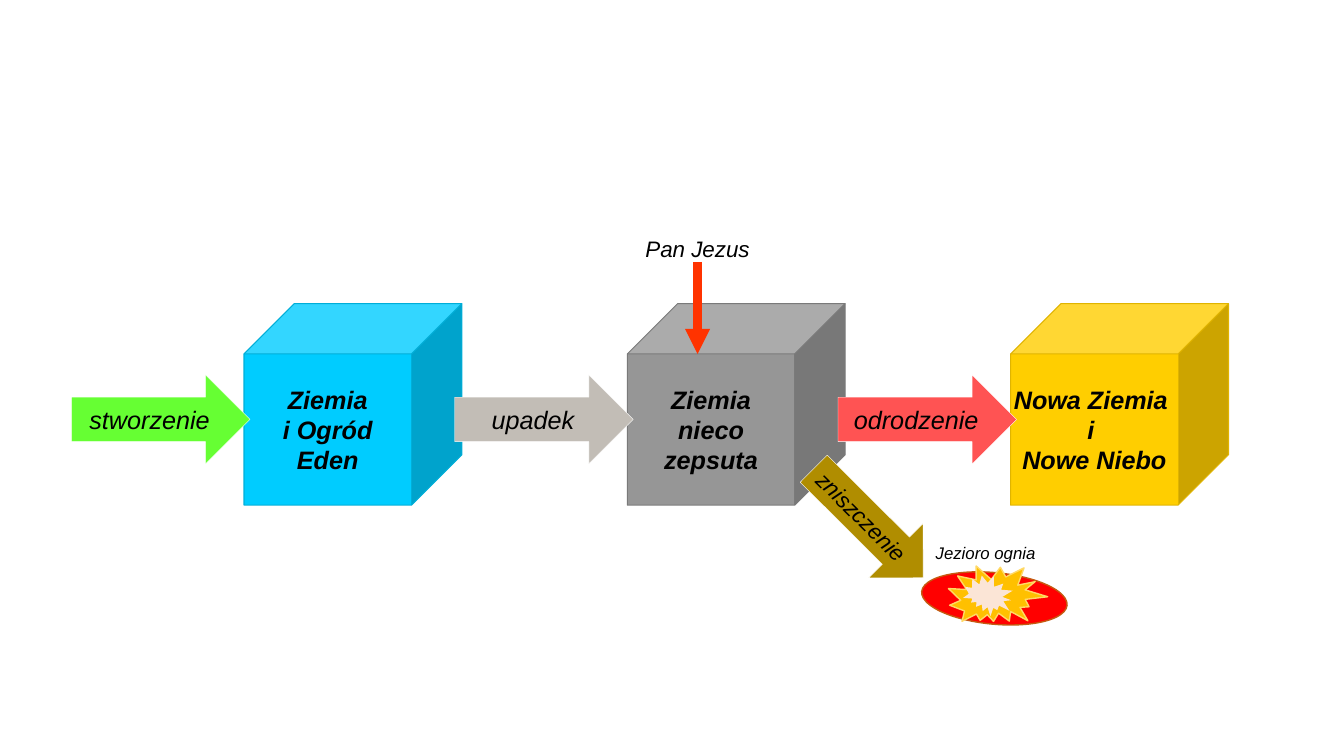
from dataclasses import dataclass

from lxml import etree
from pptx import Presentation
from pptx.dml.color import RGBColor
from pptx.enum.shapes import MSO_CONNECTOR, MSO_SHAPE
from pptx.enum.text import MSO_ANCHOR, MSO_AUTO_SIZE, PP_ALIGN
from pptx.oxml.ns import qn
from pptx.util import Cm, Pt


@dataclass(frozen=True)
class Theme:
    font: str = "Arial"
    text: str = "000000"
    stage_size: int = 18
    label_size: int = 16
    small_size: int = 12
    arrow_edge: str = "FFFFFF"
    destruction: str = "B08D00"
    descent: str = "FF3300"
    lake: str = "FF0000"
    lake_edge: str = "C55A11"
    flame: str = "FFC000"
    flame_edge: str = "FFD966"
    glow: str = "FBE5D6"


THEME = Theme()

# Arrow text, arrow fill, cube text, cube fill, cube edge.
# "\n" starts a paragraph, "\v" breaks a line.
STAGES = [
    ("stworzenie", "66FF33", "Ziemia\ni Ogród\vEden", "00CCFF", "00AED8"),
    ("upadek", "C2BDB6", "Ziemia\vnieco\vzepsuta", "969696", "7A7A7A"),
    ("odrodzenie", "FF5353", "Nowa Ziemia \ni \nNowe Niebo", "FFCE00", "E0B400"),
]
STAGE_LEFT, STAGE_TOP, STAGE_PITCH = 1.8, 7.65, 9.66
STAGE_WIDTH, STAGE_HEIGHT = 9.84, 5.08


def write_text(shape, text, size=THEME.stage_size, bold=False, wrap=False):
    frame = shape.text_frame
    frame.text = text
    frame.word_wrap = wrap
    frame.vertical_anchor = MSO_ANCHOR.MIDDLE
    for paragraph in frame.paragraphs:
        paragraph.alignment = PP_ALIGN.CENTER
        for run in paragraph.runs:
            run.font.name = THEME.font
            run.font.size = Pt(size)
            run.font.bold = bold
            run.font.italic = True
            run.font.color.rgb = RGBColor.from_string(THEME.text)


def add_figure(shapes, kind, box, fill, edge=None, edge_width=1, rotation=0):
    shape = shapes.add_shape(kind, *map(Cm, box))
    shape.shadow.inherit = False
    shape.rotation = rotation
    shape.fill.solid()
    shape.fill.fore_color.rgb = RGBColor.from_string(fill)
    if edge:
        shape.line.color.rgb = RGBColor.from_string(edge)
        shape.line.width = Pt(edge_width)
    else:
        shape.line.fill.background()
    return shape


def add_label(shapes, box, text, size):
    label = shapes.add_textbox(*map(Cm, box))
    frame = label.text_frame
    frame.margin_left = frame.margin_right = Cm(0.08)
    frame.margin_top = frame.margin_bottom = Cm(0.08)
    frame.auto_size = MSO_AUTO_SIZE.SHAPE_TO_FIT_TEXT
    write_text(label, text, size=size, wrap=True)


def add_block_arrow(shapes, box, text, fill, size=THEME.stage_size, rotation=0):
    arrow = add_figure(shapes, MSO_SHAPE.RIGHT_ARROW, box, fill,
                       THEME.arrow_edge, 0.25, rotation)
    write_text(arrow, text, size=size)


def add_stage(shapes, box, stage):
    """A cube at the right of the box, with an arrow leading into it."""
    left, top, width, height = box
    arrow_text, arrow_fill, cube_text, cube_fill, cube_edge = stage
    cube_width, arrow_width, arrow_height = 5.49, 4.5, 2.24
    cube_box = (left + width - cube_width, top, cube_width, height)
    cube = add_figure(shapes, MSO_SHAPE.CUBE, cube_box, cube_fill, cube_edge, 0.75)
    write_text(cube, cube_text, bold=True)
    add_block_arrow(shapes, (left, top + 1.8, arrow_width, arrow_height),
                    arrow_text, arrow_fill)


def add_descent(shapes, box):
    """A label with an arrow pointing down to the bottom of the box."""
    left, top, width, height = box
    center = left + width / 2
    line = shapes.add_connector(MSO_CONNECTOR.STRAIGHT, Cm(center), Cm(top + 0.76),
                                Cm(center), Cm(top + height))
    line.line.color.rgb = RGBColor.from_string(THEME.descent)
    line.line.width = Pt(6)
    etree.SubElement(line.line._get_or_add_ln(), qn("a:tailEnd"), type="triangle")
    etree.SubElement(line._element.spPr, qn("a:effectLst"))
    add_label(shapes, (left, top, width, 0.84), "Pan Jezus", THEME.label_size)


def add_fire_lake(shapes, box):
    """A label above a burning lake."""
    left, top, width, height = box
    add_label(shapes, (left, top, width, 0.66), "Jezioro ognia", THEME.small_size)
    lake = shapes.add_group_shape().shapes
    add_figure(lake, MSO_SHAPE.FLOWCHART_CONNECTOR,
               (left + 0.21, top + height - 1.45, 3.68, 1.3),
               THEME.lake, THEME.lake_edge, rotation=5.4)
    add_figure(lake, MSO_SHAPE.EXPLOSION2,
               (left + 0.89, top + height - 1.73, 2.46, 1.73),
               THEME.flame, THEME.flame_edge, rotation=16.2)
    add_figure(lake, MSO_SHAPE.EXPLOSION2,
               (left + 1.32, top + height - 1.43, 1.19, 1.14),
               THEME.glow, rotation=56.2)


def main():
    presentation = Presentation()
    presentation.slide_width, presentation.slide_height = Cm(33.87), Cm(19.05)
    slide = presentation.slides.add_slide(presentation.slide_layouts[6])
    shapes = slide.shapes

    # Row of stages
    for index, stage in enumerate(STAGES):
        left = STAGE_LEFT + index * STAGE_PITCH
        add_stage(shapes, (left, STAGE_TOP, STAGE_WIDTH, STAGE_HEIGHT), stage)

    # Branch down to the lake
    add_block_arrow(shapes, (19.94, 12.22, 3.89, 1.93), "zniszczenie",
                    THEME.destruction, size=THEME.label_size, rotation=44.9)
    add_fire_lake(shapes, (23.01, 13.61, 3.66, 2.27))

    # Arrow from above
    add_descent(shapes, (15.75, 5.84, 3.66, 3.08))

    presentation.save("out.pptx")


if __name__ == "__main__":
    main()
